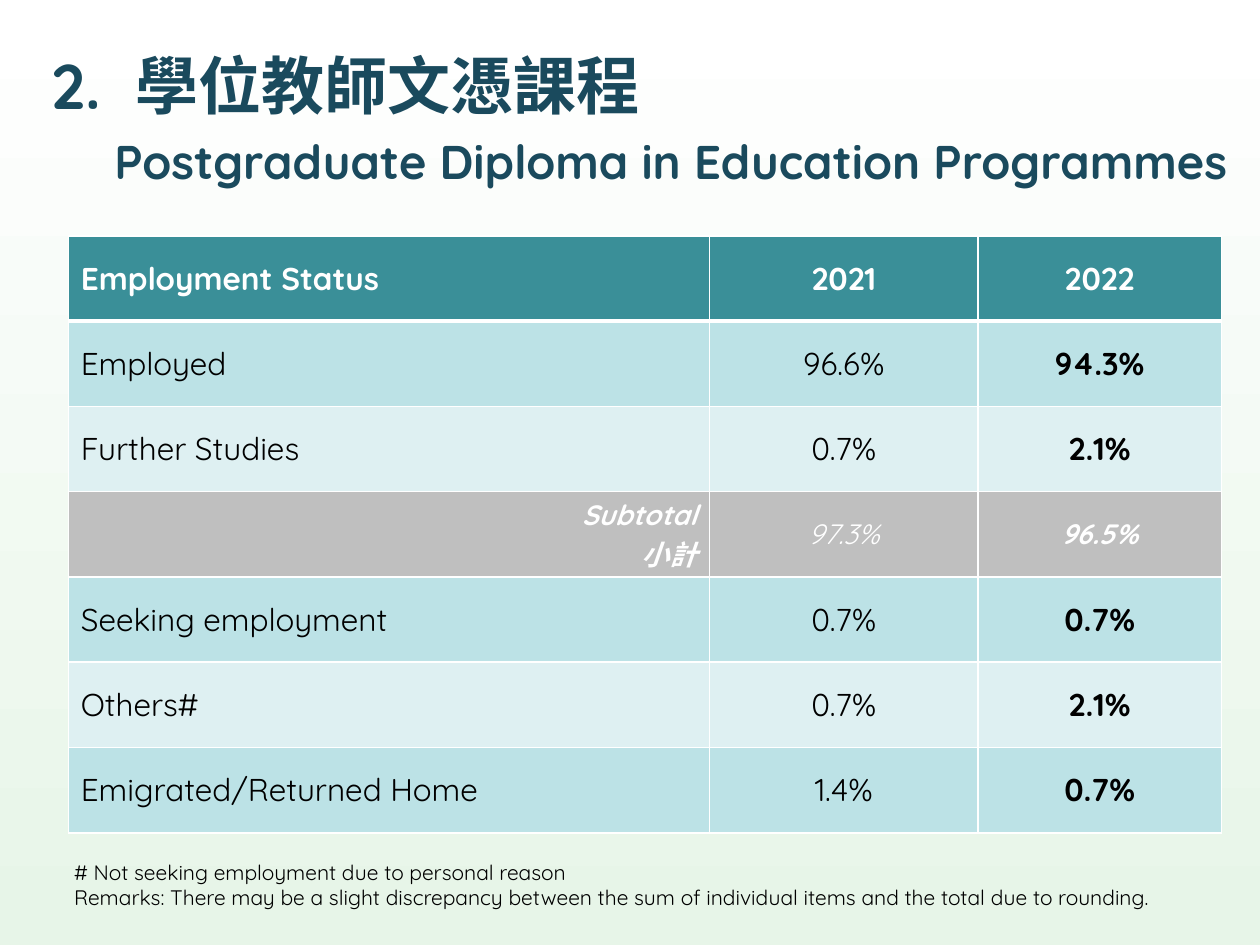
from lxml.etree import SubElement
from pptx import Presentation
from pptx.dml.color import RGBColor
from pptx.enum.text import MSO_ANCHOR, PP_ALIGN
from pptx.oxml.ns import qn
from pptx.util import Pt

FONT = "Quicksand"
NAVY = RGBColor(0x1A, 0x4A, 0x5D)
TEAL = RGBColor(0x3A, 0x8F, 0x98)
AQUA = RGBColor(0xBC, 0xE2, 0xE6)
PALE = RGBColor(0xDE, 0xF0, 0xF2)
GREY = RGBColor(0xBF, 0xBF, 0xBF)
MINT = RGBColor(0xE7, 0xF5, 0xE8)
WHITE = RGBColor(0xFF, 0xFF, 0xFF)
BLACK = RGBColor(0x00, 0x00, 0x00)

COLUMN_WIDTHS = (366.5, 153.4, 139)
ROW_HEIGHT = 48.75
HEADER = ("Employment Status", "2021", "2022")
SUBTOTAL = ("Subtotal\n小計", "97.3%", "96.5%")
ROWS = (
    (HEADER, TEAL),
    (("Employed", "96.6%", "94.3%"), AQUA),
    (("Further Studies", "0.7%", "2.1%"), PALE),
    (SUBTOTAL, GREY),
    (("Seeking employment", "0.7%", "0.7%"), AQUA),
    (("Others#", "0.7%", "2.1%"), PALE),
    (("Emigrated/Returned Home", "1.4%", "0.7%"), AQUA),
)
FOOTNOTES = (
    "# Not seeking employment due to personal reason\n"
    "Remarks: There may be a slight discrepancy between the sum of "
    "individual items and the total due to rounding."
)


def write_text(paragraph, text, size=18, color=BLACK, bold=False, italic=False,
               align=PP_ALIGN.LEFT, margin=0, indent=0, before=0, spacing=1.0):
    paragraph.alignment = align
    paragraph.space_before = Pt(before)
    paragraph.line_spacing = spacing
    properties = paragraph._p.get_or_add_pPr()
    properties.set("marL", str(Pt(margin)))
    properties.set("indent", str(Pt(indent)))
    run = paragraph.add_run()
    run.text = text
    font = run.font
    font.name, font.size, font.bold, font.italic = FONT, Pt(size), bold, italic
    font.color.rgb = color


def write_lines(frame, text, **formatting):
    for index, line in enumerate(text.split("\n")):
        paragraph = frame.add_paragraph() if index else frame.paragraphs[0]
        write_text(paragraph, line, **formatting)


def add_text_frame(slide, left, top, width, height):
    box = slide.shapes.add_textbox(Pt(left), Pt(top), Pt(width), Pt(height))
    box.text_frame.word_wrap = True
    return box.text_frame


def set_background(slide):
    fill = slide.background.fill
    fill.gradient()
    fill.gradient_angle = 270
    for stop, color, position in zip(fill.gradient_stops, (WHITE, MINT), (0, 1)):
        stop.color.rgb = color
        stop.position = position


def set_borders(cell, top, bottom):
    # Border elements must come before the cell fill
    properties = cell._tc.get_or_add_tcPr()
    for side, width in (("L", 1), ("R", 1), ("T", top), ("B", bottom)):
        line = SubElement(properties, qn(f"a:ln{side}"), w=str(Pt(width)))
        fill = SubElement(line, qn("a:solidFill"))
        SubElement(fill, qn("a:srgbClr"), val=str(WHITE))


def add_status_table(slide):
    shape = slide.shapes.add_table(
        len(ROWS), len(COLUMN_WIDTHS), Pt(39), Pt(134.8),
        Pt(sum(COLUMN_WIDTHS)), Pt(ROW_HEIGHT * len(ROWS)))
    table = shape.table
    for column, width in zip(table.columns, COLUMN_WIDTHS):
        column.width = Pt(width)
    for row_index, (values, fill_color) in enumerate(ROWS):
        table.rows[row_index].height = Pt(ROW_HEIGHT)
        is_header, is_subtotal = values is HEADER, values is SUBTOTAL
        for column_index, value in enumerate(values):
            cell = table.cell(row_index, column_index)
            cell.vertical_anchor = MSO_ANCHOR.MIDDLE
            set_borders(cell, top=3 if row_index == 1 else 1,
                        bottom=3 if is_header else 1)
            cell.fill.solid()
            cell.fill.fore_color.rgb = fill_color
            align = PP_ALIGN.CENTER
            if column_index == 0:
                align = PP_ALIGN.RIGHT if is_subtotal else PP_ALIGN.LEFT
            write_lines(
                cell.text_frame, value, align=align,
                size=16 if is_subtotal else 18,
                color=WHITE if is_header or is_subtotal else BLACK,
                bold=(is_header or column_index == 2
                      or (is_subtotal and column_index == 0)),
                italic=is_subtotal)


def main():
    presentation = Presentation()
    presentation.slide_width, presentation.slide_height = Pt(720), Pt(540)
    slide = presentation.slides.add_slide(presentation.slide_layouts[6])
    set_background(slide)

    # Bilingual title
    title = add_text_frame(slide, 22.3, 28, 689, 108)
    write_text(title.paragraphs[0], "2.\t學位教師文憑課程", size=36, color=NAVY,
               bold=True, margin=48, indent=-48, spacing=0.9)
    write_text(title.add_paragraph(),
               "Postgraduate Diploma in Education Programmes", size=27,
               color=NAVY, bold=True, margin=36, before=9, spacing=0.9)

    # Employment figures
    add_status_table(slide)

    # Footnotes
    notes = add_text_frame(slide, 35.3, 487.4, 663, 36)
    write_lines(notes, FOOTNOTES, size=12)

    presentation.save("out.pptx")


if __name__ == "__main__":
    main()
